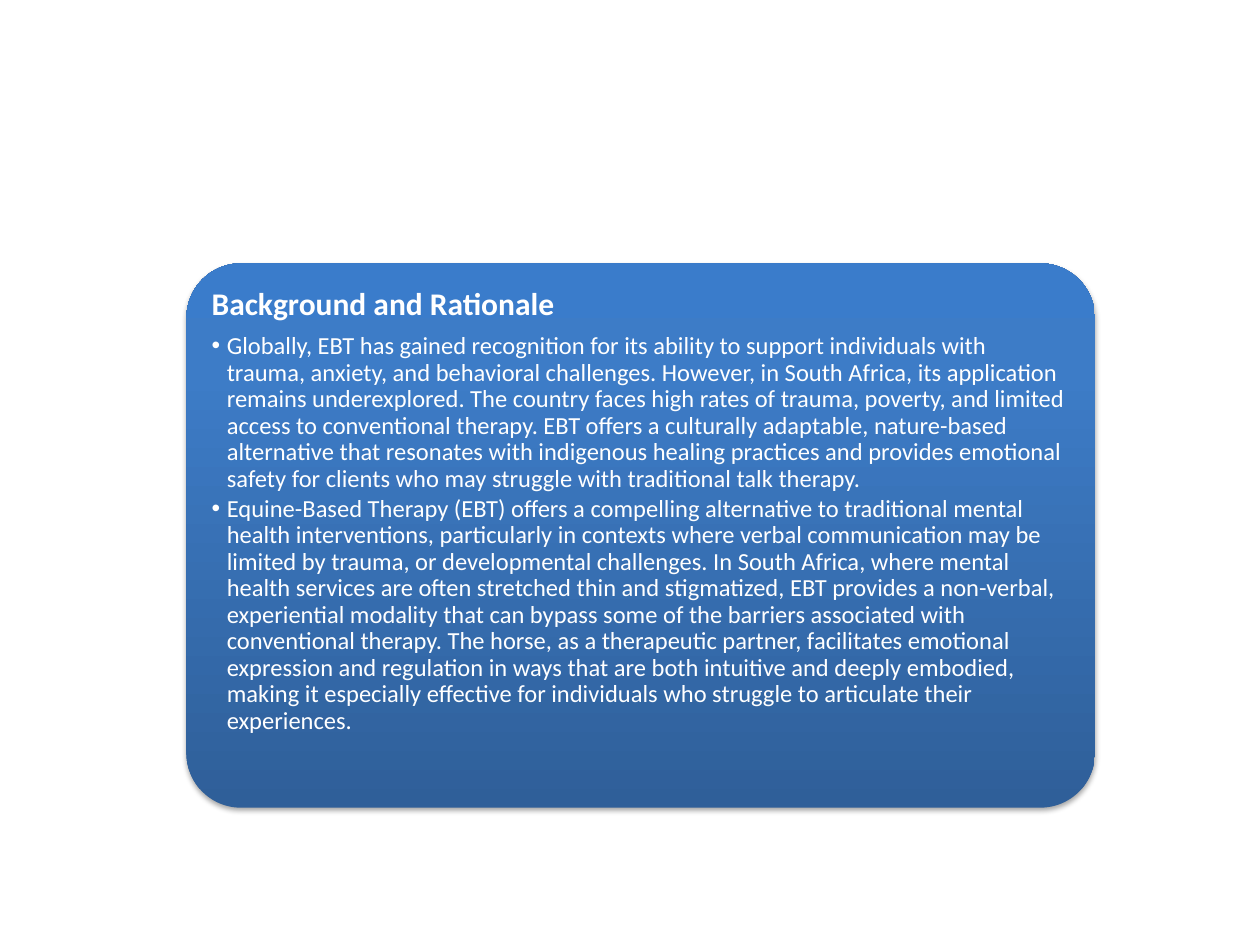
from copy import deepcopy
from pptx import Presentation
from pptx.dml.color import RGBColor
from pptx.enum.shapes import MSO_SHAPE as Shape
from pptx.enum.text import MSO_ANCHOR as Anchor
from pptx.oxml import parse_xml
from pptx.oxml.ns import nsdecls, qn
from pptx.util import Inches, Pt

TITLE = "Background and Rationale"
POINTS = [
    "Globally, EBT has gained recognition for its ability to support individuals with "
    "trauma, anxiety, and behavioral challenges. However, in South Africa, its application "
    "remains underexplored. The country faces high rates of trauma, poverty, and limited "
    "access to conventional therapy. EBT offers a culturally adaptable, nature-based "
    "alternative that resonates with indigenous healing practices and provides emotional "
    "safety for clients who may struggle with traditional talk therapy.",
    "Equine-Based Therapy (EBT) offers a compelling alternative to traditional mental "
    "health interventions, particularly in contexts where verbal communication may be "
    "limited by trauma, or developmental challenges. In South Africa, where mental "
    "health services are often stretched thin and stigmatized, EBT provides a non-verbal, "
    "experiential modality that can bypass some of the barriers associated with "
    "conventional therapy. The horse, as a therapeutic partner, facilitates emotional "
    "expression and regulation in ways that are both intuitive and deeply embodied, "
    "making it especially effective for individuals who struggle to articulate their "
    "experiences.",
]
STOPS = [(0, "2F5F99"), (0.8, "3D7CC7"), (1, "3A7CCB")]
WIDE, HIGH = 10, 7.5
CARD = (1.48, 2.09, 7.21, 4.32)
PAD, INSET, RIGHT, INDENT = 0.13, 0.07, 0.09, 0.12


def color(code):
    return RGBColor.from_string(code)


def shade(fill):
    fill.gradient()
    fill.gradient_angle = 90
    first = fill.gradient_stops[0]._gs
    first.addnext(deepcopy(first))
    for stop, (pos, code) in zip(fill.gradient_stops, STOPS):
        stop.position = pos
        stop.color.rgb = color(code)


def cast(shape):
    shape.shadow.inherit = False
    glow = parse_xml(
        f'<a:outerShdw {nsdecls("a")} blurRad="{Pt(3.1)}" dist="{Pt(1.8)}" '
        'dir="5400000" rotWithShape="0"><a:srgbClr val="000000">'
        '<a:alpha val="35000"/></a:srgbClr></a:outerShdw>')
    shape._element.spPr.find(qn("a:effectLst")).append(glow)


def bullet(para):
    props = para._p.get_or_add_pPr()
    props.set("marL", str(Inches(INDENT)))
    props.set("indent", str(-Inches(INDENT)))
    for mark in ('buFont {} typeface="Arial"', 'buChar {} char="•"'):
        props.append(parse_xml(f'<a:{mark.format(nsdecls("a"))}/>'))
    para.level = 1


def style(para, size, after, bold):
    para.line_spacing = 0.9
    para.space_after = Pt(size * after)
    for run in para.runs:
        font = run.font
        font.name, font.size, font.bold = "Calibri", Pt(size), bold
        font.color.rgb = color("FFFFFF")


def main():
    deck = Presentation()
    deck.slide_width, deck.slide_height = Inches(WIDE), Inches(HIGH)
    slide = deck.slides.add_slide(deck.slide_layouts[6])

    card = slide.shapes.add_shape(Shape.ROUNDED_RECTANGLE, *map(Inches, CARD))
    card.adjustments[0] = 0.1
    shade(card.fill)
    card.line.fill.background()
    cast(card)

    left, top, width, height = CARD
    inner = (left + PAD, top + PAD, width - 2 * PAD, height - 2 * PAD)
    frame = slide.shapes.add_textbox(*map(Inches, inner)).text_frame
    frame.word_wrap = True
    frame.vertical_anchor = Anchor.TOP
    frame.margin_left = frame.margin_top = frame.margin_bottom = Inches(INSET)
    frame.margin_right = Inches(RIGHT)

    frame.text = TITLE
    style(frame.paragraphs[0], 18, 0.35, True)
    for point in POINTS:
        para = frame.add_paragraph()
        para.text = point
        bullet(para)
        style(para, 14, 0.15, False)

    deck.save("out.pptx")


if __name__ == "__main__":
    main()
